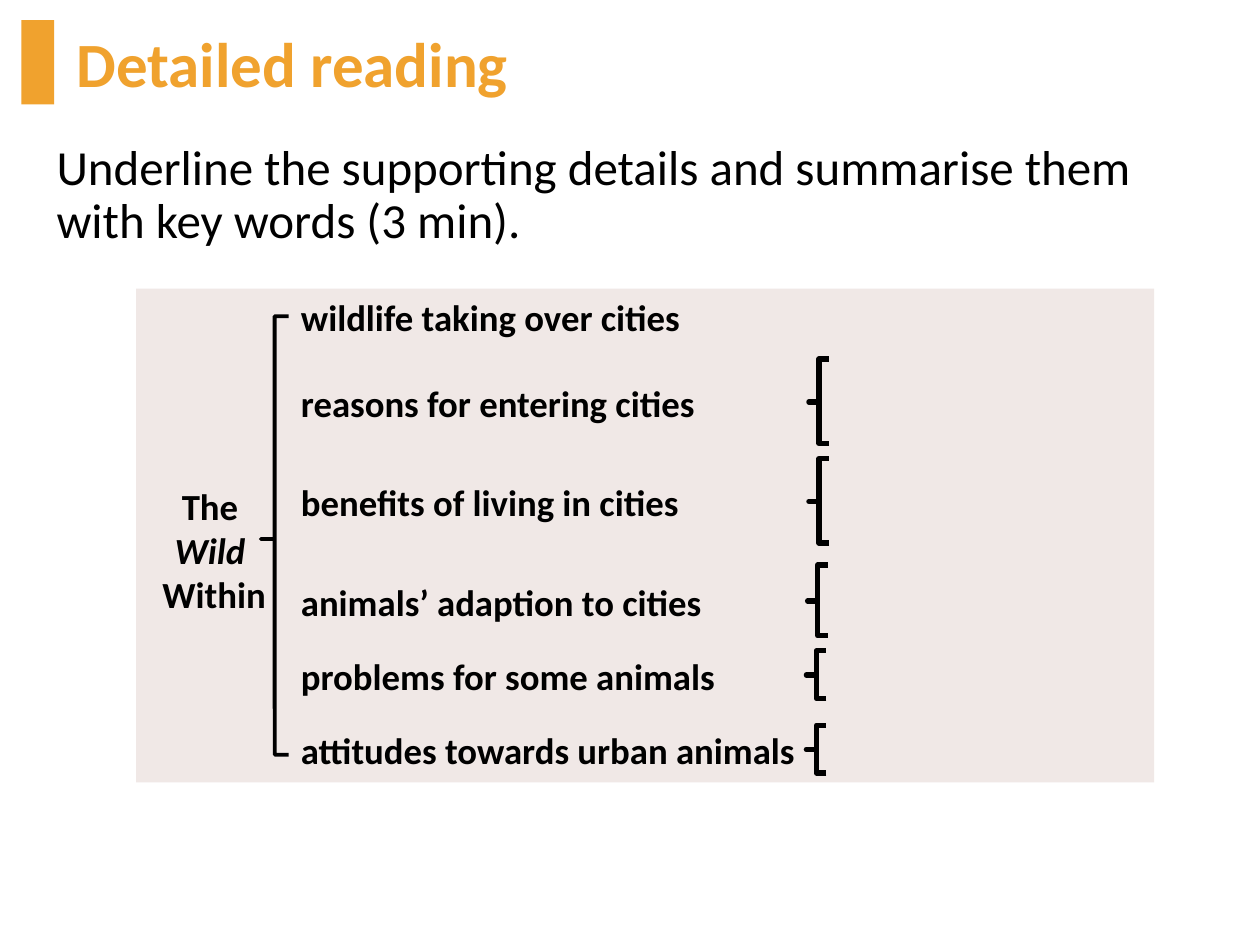
from pptx import Presentation
from pptx.dml.color import RGBColor
from pptx.enum.shapes import MSO_SHAPE
from pptx.enum.text import MSO_ANCHOR, PP_ALIGN
from pptx.util import Inches, Pt

COLUMNS, ROWS = 100, 75  # square grid over the slide

ORANGE, PANEL, BLACK = "F0A22E", "F0E8E6", "000000"


def color(hex_value):
    return RGBColor.from_string(hex_value)


class ReadingSlide:
    """Holds the style and the current slide; boxes are (column, row, columns, rows)."""

    font_name = "Calibri"

    def __init__(self, deck):
        self.column = deck.slide_width / COLUMNS
        self.row = deck.slide_height / ROWS
        self.slide = deck.slides.add_slide(deck.slide_layouts[6])

    def place(self, box):
        left, top, width, height = box
        return (round(left * self.column), round(top * self.row),
                round(width * self.column), round(height * self.row))

    def block(self, box, fill):
        block = self.slide.shapes.add_shape(MSO_SHAPE.RECTANGLE, *self.place(box))
        block.shadow.inherit = False
        block.fill.solid()
        block.fill.fore_color.rgb = color(fill)
        block.line.fill.background()

    def brace(self, box, weight):
        brace = self.slide.shapes.add_shape(MSO_SHAPE.LEFT_BRACE, *self.place(box))
        brace.shadow.inherit = False
        brace.adjustments[0] = 0
        brace.adjustments[1] = 0.508
        brace.fill.background()
        brace.line.color.rgb = color(BLACK)
        brace.line.width = Pt(weight)

    def text(self, box, lines, size, ink=BLACK, bold=True, italic_line=None,
             anchor=MSO_ANCHOR.TOP, **paragraph_format):
        frame = self.slide.shapes.add_textbox(*self.place(box)).text_frame
        frame.word_wrap = True
        frame.vertical_anchor = anchor
        for index, line in enumerate(lines):
            paragraph = frame.paragraphs[0] if index == 0 else frame.add_paragraph()
            for name, value in paragraph_format.items():
                setattr(paragraph, name, value)
            run = paragraph.add_run()
            run.text = line
            font_values = {"name": self.font_name, "size": Pt(size), "bold": bold,
                           "italic": index == italic_line}
            for name, value in font_values.items():
                setattr(run.font, name, value)
            run.font.color.rgb = color(ink)


def main():
    deck = Presentation()
    deck.slide_width, deck.slide_height = Inches(10), Inches(7.5)
    page = ReadingSlide(deck)

    # Heading and task
    page.block((1.7, 1.6, 2.6, 6.7), ORANGE)
    page.block((10.8, 22.9, 80.8, 39.2), PANEL)
    page.text((5.1, 1.3, 92.3, 7.3), ["Detailed reading"], 36, ORANGE,
              anchor=MSO_ANCHOR.MIDDLE)
    page.text((3.5, 10.9, 93.9, 56.7),
              ["Underline the supporting details and summarise them "
               "with key words (3 min)."],
              28, bold=False, line_spacing=0.9, space_before=Pt(10))

    # Topics: wording, label row, brace column, brace height
    topics = [
        ("wildlife taking over cities", 22.9, None, None),
        ("reasons for entering cities", 29.7, 64.2, 6.7),
        ("benefits of living in cities", 37.6, 64.2, 6.7),
        ("animals’ adaption to cities", 45.5, 64.1, 5.6),
        ("problems for some animals", 51.4, 64, 3.8),
        ("attitudes towards urban animals", 57.3, 64, 3.8),
    ]
    label_height = 4.5
    for wording, top, brace_left, brace_height in topics:
        page.text((22.9, top, 42, label_height), [wording], 21)
        if brace_height:
            middle = top + label_height / 2 - 0.1
            page.brace((brace_left, middle - brace_height / 2, 1.6, brace_height), 3)

    # Text title and the brace that joins all topics
    page.text((8.8, 37.9, 16.4, 11.6), ["The ", "Wild ", "Within"], 21,
              italic_line=1, alignment=PP_ALIGN.CENTER)
    page.brace((20.7, 25.1, 2.2, 34.8), 2.25)

    deck.save("out.pptx")


if __name__ == "__main__":
    main()
